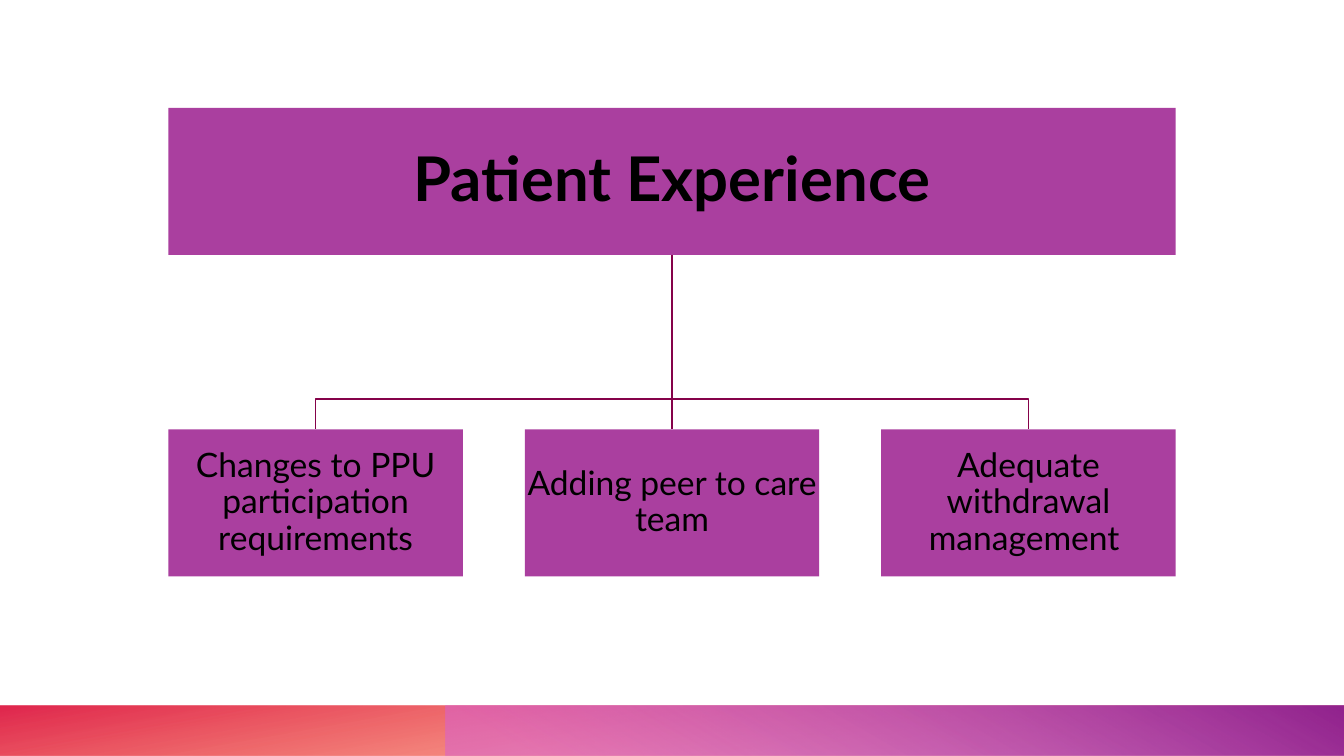
import pptx
import pptx.dml.color
import pptx.enum.shapes
import pptx.enum.text
import pptx.oxml.ns
import pptx.util
from lxml import etree

Inches = pptx.util.Inches
Pt = pptx.util.Pt

COLORS = {
    "box": "AA3F9F",
    "branch": "85024A",
    "text": "000000",
    "orange": "FE4A00",
    "red": "DA002F",
    "pink": "D861D4",
    "purple": "92248E",
}
FONT = "Lato"
TOPIC = "Patient Experience"
CHANGES = [
    "Changes to PPU participation requirements",
    "Adding peer to care team",
    "Adequate withdrawal management ",
]


def color(name):
    """Return the named colour as an RGBColor."""
    return pptx.dml.color.RGBColor.from_string(COLORS[name])


def add_gradient_bar(slide, left, top, width, height, stops, angle):
    """Draw a bar with stops given as (position, colour name, opacity in percent)."""
    bar = slide.shapes.add_shape(
        pptx.enum.shapes.MSO_SHAPE.RECTANGLE, left, top, width, height
    )
    bar.shadow.inherit = False
    bar.line.fill.background()
    bar.fill.gradient()
    bar.fill.gradient_angle = angle
    for gradient_stop, (position, name, _) in zip(bar.fill.gradient_stops, stops):
        gradient_stop.position = position
        gradient_stop.color.rgb = color(name)
    color_elements = bar._element.spPr.iter(pptx.oxml.ns.qn("a:srgbClr"))
    for element, (_, _, opacity) in zip(color_elements, stops):
        alpha = etree.SubElement(element, pptx.oxml.ns.qn("a:alpha"))
        alpha.set("val", str(opacity * 1000))


def add_footer_band(slide, left, top, width, height):
    """Draw the warm bar across the box and the purple bar over its right part."""
    add_gradient_bar(slide, left, top, width, height,
                     [(0.14, "orange", 28), (1, "red", 85)], 100)
    warm_width = Inches(4.42)
    add_gradient_bar(slide, left + warm_width, top, width - warm_width, height,
                     [(0.09, "pink", 55), (0.99, "purple", 100)], 60)


def format_box(shape, text, size, inset, bold=False):
    """Fill a box and set its centred text."""
    shape.fill.solid()
    shape.fill.fore_color.rgb = color("box")
    shape.line.fill.background()
    frame = shape.text_frame
    frame.text = text
    frame.word_wrap = True
    frame.auto_size = pptx.enum.text.MSO_AUTO_SIZE.NONE
    frame.vertical_anchor = pptx.enum.text.MSO_ANCHOR.MIDDLE
    frame.margin_left = frame.margin_right = inset
    frame.margin_top = frame.margin_bottom = inset
    paragraph = frame.paragraphs[0]
    paragraph.alignment = pptx.enum.text.PP_ALIGN.CENTER
    paragraph.line_spacing = 0.9
    font = paragraph.runs[0].font
    font.name, font.size, font.bold = FONT, Pt(size), bold
    font.color.rgb = color("text")


def add_branch(slide, parent, child):
    """Join the bottom of the parent box to the top of the child box."""
    start_x = parent.left + parent.width // 2
    start_y = parent.top + parent.height
    end_x = child.left + child.width // 2
    if abs(start_x - end_x) < Inches(0.01):
        branch = slide.shapes.add_connector(
            pptx.enum.shapes.MSO_CONNECTOR.STRAIGHT, start_x, start_y, end_x, child.top
        )
        branch.begin_connect(parent, 2)
        branch.end_connect(child, 0)
        etree.SubElement(branch._element.spPr, pptx.oxml.ns.qn("a:effectLst"))
    else:
        bend_y = child.top - Inches(0.3)
        builder = slide.shapes.build_freeform(start_x, start_y)
        builder.add_line_segments(
            [(start_x, bend_y), (end_x, bend_y), (end_x, child.top)], close=False
        )
        branch = builder.convert_to_shape()
        branch.fill.background()
        branch.shadow.inherit = False
    branch.line.color.rgb = color("branch")
    branch.line.width = Pt(1)


def add_hierarchy(slide, left, top, width, height):
    """Place the topic above an evenly spaced row of changes."""
    box_width, box_height = Inches(2.92), Inches(1.46)
    title = slide.shapes.title
    title.left, title.top, title.width, title.height = left, top, width, box_height
    format_box(title, TOPIC, 44, Inches(0.03), bold=True)
    step = (width - box_width) // (len(CHANGES) - 1)
    for index, change in enumerate(CHANGES):
        box = slide.shapes.add_shape(
            pptx.enum.shapes.MSO_SHAPE.RECTANGLE,
            left + index * step, top + height - box_height, box_width, box_height,
        )
        box.shadow.inherit = False
        format_box(box, change, 24, Inches(0.02))
        add_branch(slide, title, box)


def main():
    """Build and save the presentation."""
    presentation = pptx.Presentation()
    presentation.slide_width = Inches(13.33)
    presentation.slide_height = Inches(7.5)
    slide = presentation.slides.add_slide(presentation.slide_layouts.get_by_name("Title Only"))
    add_footer_band(slide, 0, Inches(7), presentation.slide_width, Inches(0.5))
    add_hierarchy(slide, Inches(1.67), Inches(1.07), Inches(9.99), Inches(4.65))
    presentation.save("out.pptx")


if __name__ == "__main__":
    main()
